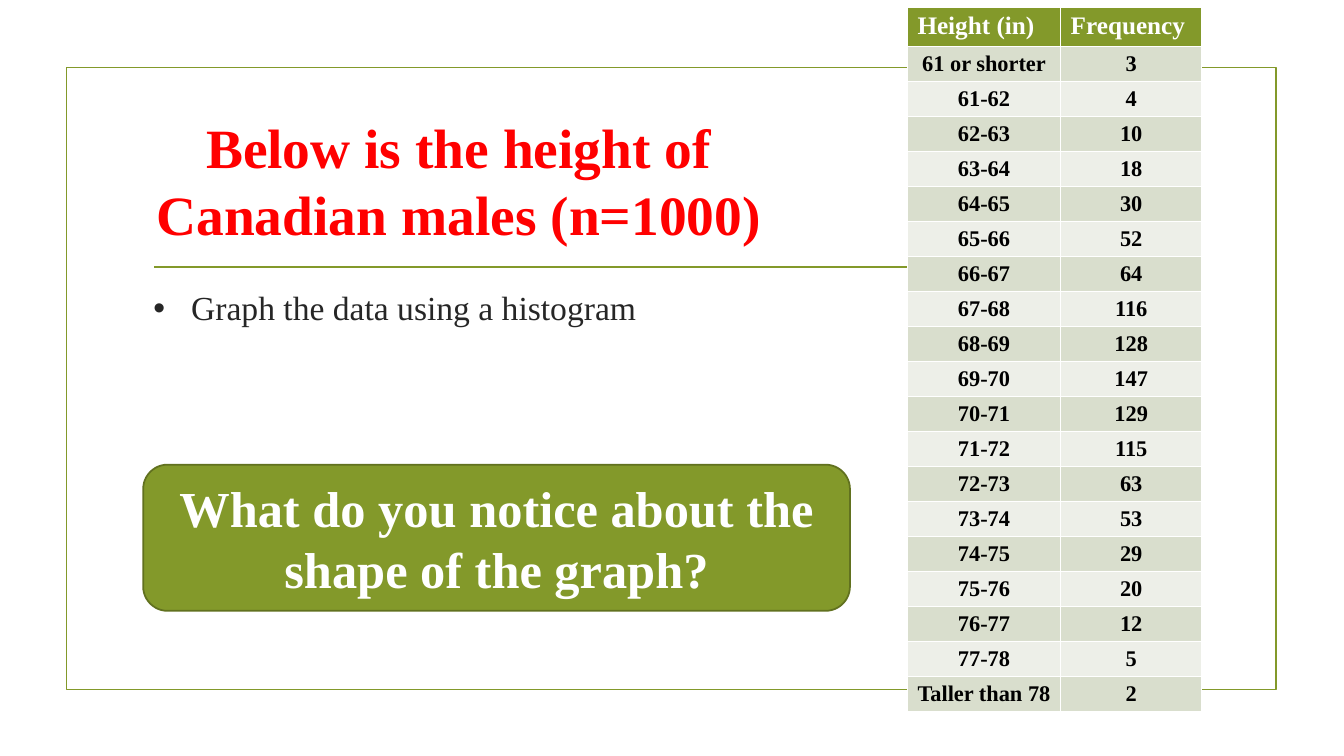
from lxml import etree
from pptx import Presentation
from pptx.dml.color import RGBColor
from pptx.enum.shapes import MSO_CONNECTOR, MSO_SHAPE
from pptx.enum.text import MSO_ANCHOR, MSO_AUTO_SIZE, PP_ALIGN
from pptx.oxml.ns import qn
from pptx.util import Inches, Pt

CENTER, LEFT = PP_ALIGN.CENTER, PP_ALIGN.LEFT
MIDDLE = MSO_ANCHOR.MIDDLE
NO_AUTOFIT = MSO_AUTO_SIZE.NONE
RECTANGLE, ROUNDED = MSO_SHAPE.RECTANGLE, MSO_SHAPE.ROUNDED_RECTANGLE
STRAIGHT = MSO_CONNECTOR.STRAIGHT

OLIVE = RGBColor(0x83, 0x99, 0x2A)
DARK_OLIVE = RGBColor(0x61, 0x71, 0x1F)
RED = RGBColor(0xFF, 0x00, 0x00)
WHITE = RGBColor(0xFF, 0xFF, 0xFF)
BLACK = RGBColor(0x00, 0x00, 0x00)
CHARCOAL = RGBColor(0x26, 0x26, 0x26)
BANDS = (RGBColor(0xD9, 0xDE, 0xCD), RGBColor(0xED, 0xEF, 0xE8))

FONT = "Times New Roman"
LINE_WIDTH = Pt(1.25)
COLUMN_WIDTHS = (1.52, 1.4)
HEADER_HEIGHT, ROW_HEIGHT = 0.39, 0.29
HEADERS = ("Height (in)", "Frequency")
SHORTEST, TALLEST = 61, 78
FREQUENCIES = (3, 4, 10, 18, 30, 52, 64, 116, 128, 147,
               129, 115, 63, 53, 29, 20, 12, 5, 2)


def place(shape, box):
    shape.left, shape.top, shape.width, shape.height = map(Inches, box)


def write(text_frame, text, size, color, bold=False, alignment=LEFT):
    text_frame.text = text
    paragraph = text_frame.paragraphs[0]
    paragraph.alignment = alignment
    font = paragraph.font
    font.name, font.size, font.bold = FONT, Pt(size), bold
    font.color.rgb = color


def add_frame(slide, box):
    frame = slide.shapes.add_shape(RECTANGLE, *map(Inches, box))
    frame.shadow.inherit = False
    frame.fill.background()
    frame.line.color.rgb = OLIVE
    frame.line.width = LINE_WIDTH


def add_divider(slide, box):
    left, top, width, height = box
    divider = slide.shapes.add_connector(
        STRAIGHT, *map(Inches, (left, top, left + width, top + height)))
    divider.line.color.rgb = OLIVE
    divider.line.width = LINE_WIDTH
    etree.SubElement(divider._element.spPr, qn("a:effectLst"))


def fill_title(slide, box):
    title = slide.shapes.title
    place(title, box)
    text_frame = title.text_frame
    text_frame.auto_size = NO_AUTOFIT
    text_frame.vertical_anchor = MIDDLE
    write(text_frame, "Below is the height of Canadian males (n=1000)",
          39.6, RED, True, CENTER)


def fill_body(slide, box):
    body = slide.placeholders[1]
    place(body, box)
    text_frame = body.text_frame
    text_frame.auto_size = NO_AUTOFIT
    paragraph = text_frame.paragraphs[0]
    paragraph.space_after = Pt(6)
    properties = paragraph._p.get_or_add_pPr()
    properties.set("marL", str(Inches(0.31)))
    properties.set("indent", str(Inches(-0.31)))
    bullet_color = etree.SubElement(properties, qn("a:buClr"))
    etree.SubElement(bullet_color, qn("a:srgbClr"), val=str(OLIVE))
    etree.SubElement(properties, qn("a:buSzPct"), val="115000")
    etree.SubElement(properties, qn("a:buFont"), typeface="Arial")
    etree.SubElement(properties, qn("a:buChar"), char="•")
    write(text_frame, "Graph the data using a histogram", 24, CHARCOAL)


def add_height_table(slide, box):
    ranges = [f"{low}-{low + 1}" for low in range(SHORTEST, TALLEST)]
    labels = [f"{SHORTEST} or shorter", *ranges, f"Taller than {TALLEST}"]
    rows = [HEADERS, *zip(labels, FREQUENCIES)]
    graphic_frame = slide.shapes.add_table(
        len(rows), len(HEADERS), *map(Inches, box))
    table = graphic_frame.table
    for column, width in zip(table.columns, COLUMN_WIDTHS):
        column.width = Inches(width)
    for index, values in enumerate(rows):
        is_header = index == 0
        table.rows[index].height = Inches(
            HEADER_HEIGHT if is_header else ROW_HEIGHT)
        for cell, value in zip(table.rows[index].cells, values):
            cell.fill.solid()
            if is_header:
                cell.fill.fore_color.rgb = OLIVE
                write(cell.text_frame, value, 18, WHITE, True)
            else:
                cell.fill.fore_color.rgb = BANDS[(index - 1) % 2]
                write(cell.text_frame, str(value), 16, BLACK, True, CENTER)
    place(graphic_frame, box)


def add_question(slide, box):
    question = slide.shapes.add_shape(ROUNDED, *map(Inches, box))
    question.shadow.inherit = False
    question.fill.solid()
    question.fill.fore_color.rgb = OLIVE
    question.line.color.rgb = DARK_OLIVE
    question.line.width = LINE_WIDTH
    text_frame = question.text_frame
    text_frame.word_wrap = True
    text_frame.vertical_anchor = MIDDLE
    write(text_frame, "What do you notice about the shape of the graph?",
          36, WHITE, True, CENTER)


def main():
    presentation = Presentation()
    presentation.slide_width = Inches(13.33)
    presentation.slide_height = Inches(7.5)
    slide = presentation.slides.add_slide(presentation.slide_layouts[1])
    add_frame(slide, (0.66, 0.67, 12, 6.17))
    add_divider(slide, (1.53, 2.65, 10.28, 0))
    fill_title(slide, (1.42, 1.07, 6.26, 1.43))
    fill_body(slide, (1.42, 2.8, 10.5, 3.63))
    add_height_table(slide, (9, 0.07, sum(COLUMN_WIDTHS), 7.37))
    add_question(slide, (1.42, 4.61, 7.01, 1.45))
    presentation.save("out.pptx")


if __name__ == "__main__":
    main()
